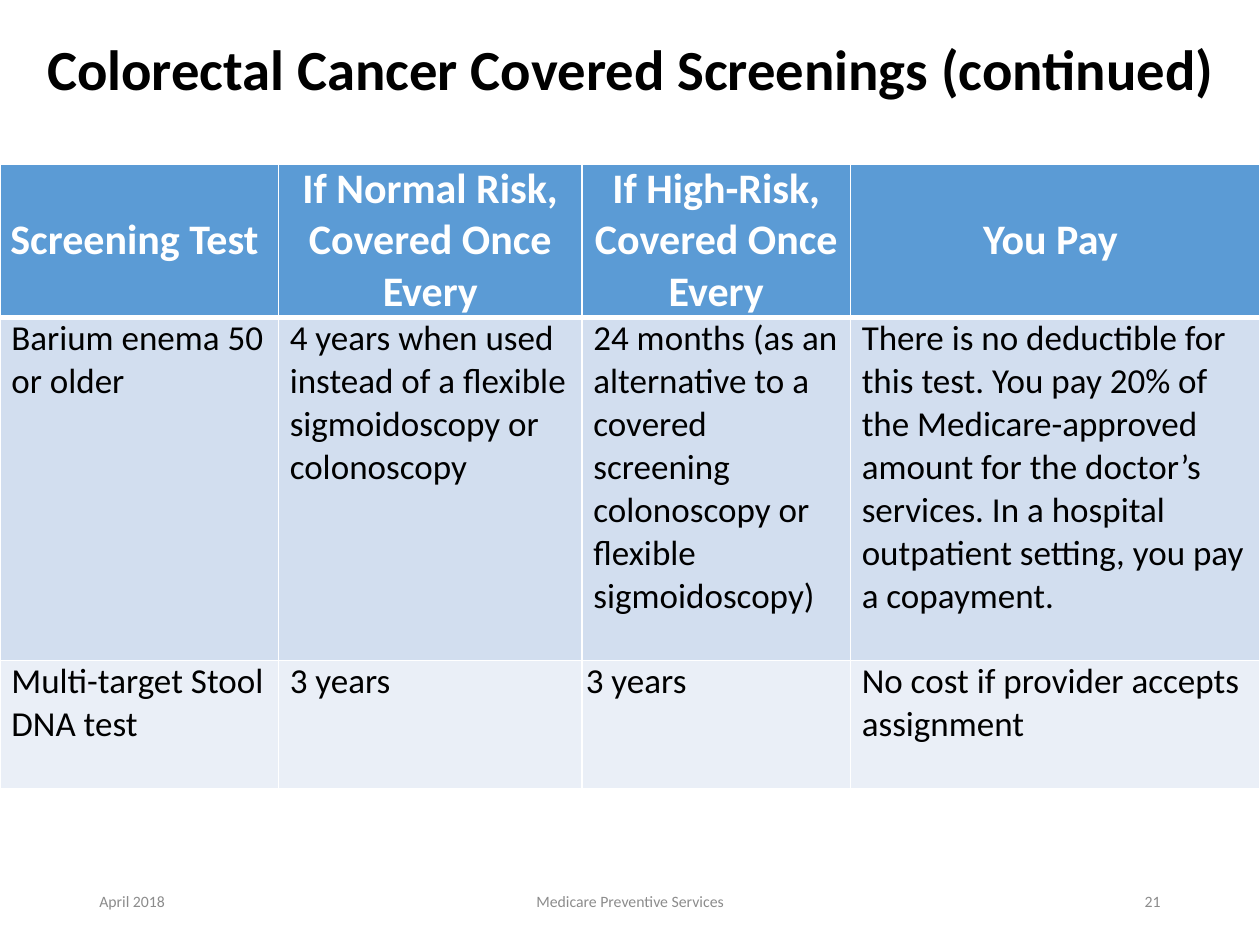
from pptx import Presentation
from pptx.dml.color import RGBColor
from pptx.enum.text import MSO_ANCHOR as Anchor, PP_ALIGN as Align
from pptx.oxml.ns import qn
from pptx.util import Inches, Pt
from lxml.etree import SubElement

BLACK = RGBColor(0x00, 0x00, 0x00)
WHITE = RGBColor(0xFF, 0xFF, 0xFF)
GRAY = RGBColor(0x8C, 0x8C, 0x8C)
HEADER_BLUE = RGBColor(0x5B, 0x9B, 0xD5)
BANDS = [RGBColor(0xD2, 0xDE, 0xEF), RGBColor(0xEA, 0xEF, 0xF7)]
FONT = "Calibri"

TITLE = "Colorectal Cancer Covered Screenings (continued)"
ROWS = [
    ["Screening Test ", "If Normal Risk,\vCovered Once Every",
     "If High-Risk,\vCovered Once Every", "You Pay "],
    ["Barium enema 50 or older",
     "4 years when used instead of a flexible sigmoidoscopy or colonoscopy",
     "24 months (as an alternative to a covered screening colonoscopy or "
     "flexible sigmoidoscopy)",
     "There is no deductible for this test. You pay 20% of the "
     "Medicare-approved amount for the doctor’s services. In a hospital "
     "outpatient setting, you pay a copayment."],
    ["Multi-target Stool DNA test", "3 years", "3 years",
     "No cost if provider accepts assignment"],
]
COLUMN_WIDTHS = [2.21, 2.41, 2.13, 3.25]
ROW_HEIGHTS = [1.21, 2.72, 1.02]
UNINDENTED = (2, 2)  # row, column
FOOTERS = [  # text, left, width, alignment
    ("April 2018", 0.69, 2.25, Align.LEFT),
    ("Medicare Preventive Services", 3.31, 3.38, Align.CENTER),
    ("21", 7.06, 2.25, Align.RIGHT),
]


def style(para, size, color, align, bold=False):
    para.alignment = align
    font = para.font
    font.name, font.size, font.bold = FONT, Pt(size), bold
    font.color.rgb = color


def set_borders(cell, bottom):
    """Draw white borders, 1 pt except for the bottom one."""
    properties = cell._tc.get_or_add_tcPr()
    for index, (side, width) in enumerate(
            [("lnL", 1), ("lnR", 1), ("lnT", 1), ("lnB", bottom)]):
        line = properties.makeelement(qn(f"a:{side}"), {"w": str(Pt(width))})
        fill = SubElement(line, qn("a:solidFill"))
        SubElement(fill, qn("a:srgbClr"), val=str(WHITE))
        properties.insert(index, line)


def add_screenings_table(page):
    table = page.shapes.add_table(
        len(ROWS), len(COLUMN_WIDTHS), Inches(0), Inches(1.3),
        Inches(sum(COLUMN_WIDTHS)), Inches(sum(ROW_HEIGHTS))).table
    for column, width in zip(table.columns, COLUMN_WIDTHS):
        column.width = Inches(width)
    for row, height in zip(table.rows, ROW_HEIGHTS):
        row.height = Inches(height)
    for r, texts in enumerate(ROWS):
        header = r == 0
        for c, text in enumerate(texts):
            cell = table.cell(r, c)
            cell.margin_left = cell.margin_right = Inches(0.03)
            cell.margin_top = cell.margin_bottom = 0
            cell.vertical_anchor = Anchor.MIDDLE if header else Anchor.TOP
            cell.fill.solid()
            cell.fill.fore_color.rgb = HEADER_BLUE if header else BANDS[r - 1]
            set_borders(cell, 3 if header else 1)
            cell.text = text
            para = cell.text_frame.paragraphs[0]
            if header:
                style(para, 24, WHITE, Align.CENTER, bold=True)
            else:
                style(para, 20, BLACK, Align.LEFT)
                if (r, c) != UNINDENTED:
                    para._p.get_or_add_pPr().set("marL", str(Inches(0.06)))


def main():
    deck = Presentation()
    deck.slide_width, deck.slide_height = Inches(10), Inches(7.5)
    page = deck.slides.add_slide(deck.slide_layouts[5])

    title = page.shapes.title
    title.left, title.top = Inches(0.24), Inches(0)
    title.width, title.height = Inches(9.53), Inches(1.14)
    title.text = TITLE
    title.text_frame.vertical_anchor = Anchor.MIDDLE
    heading = title.text_frame.paragraphs[0]
    heading.line_spacing = 0.9
    style(heading, 32.4, BLACK, Align.CENTER, bold=True)

    add_screenings_table(page)

    for text, left, width, align in FOOTERS:
        box = page.shapes.add_textbox(
            Inches(left), Inches(6.95), Inches(width), Inches(0.4))
        frame = box.text_frame
        frame.word_wrap = True
        frame.vertical_anchor = Anchor.MIDDLE
        frame.text = text
        style(frame.paragraphs[0], 9, GRAY, align)

    deck.save("out.pptx")


if __name__ == "__main__":
    main()
